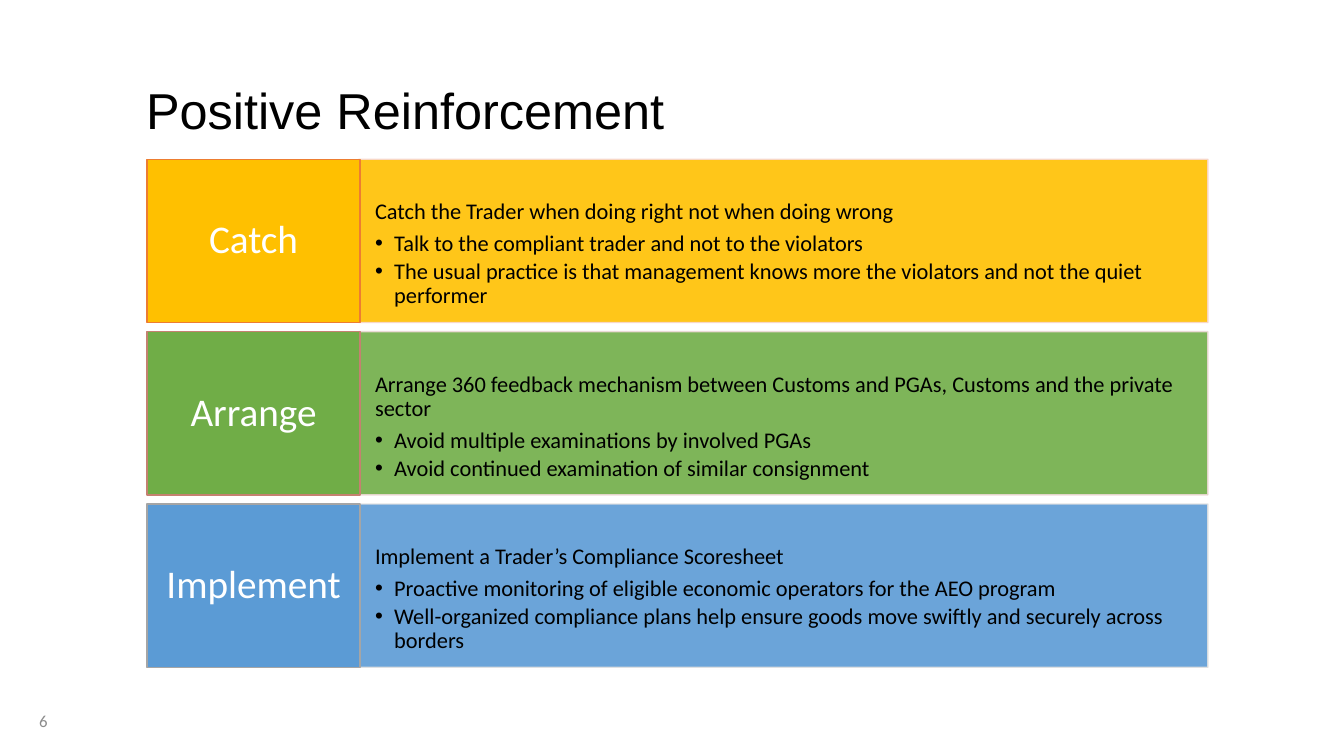
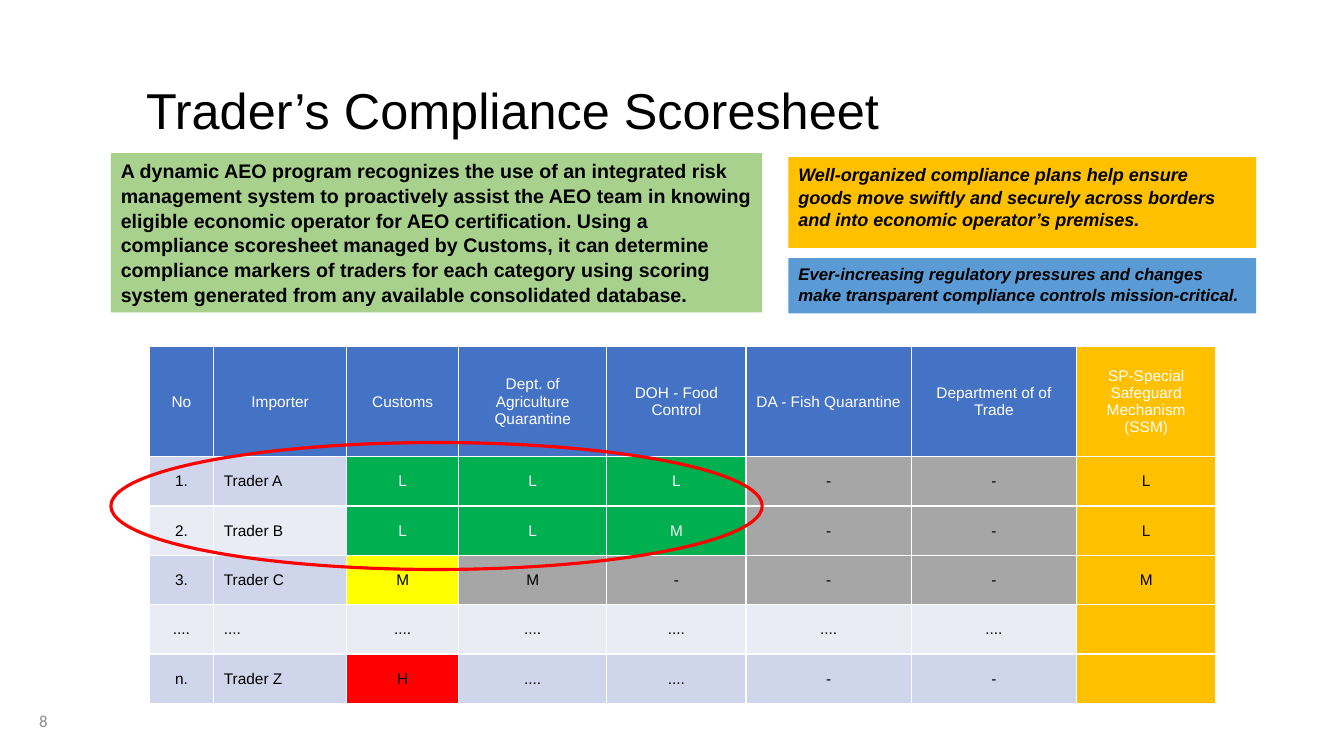
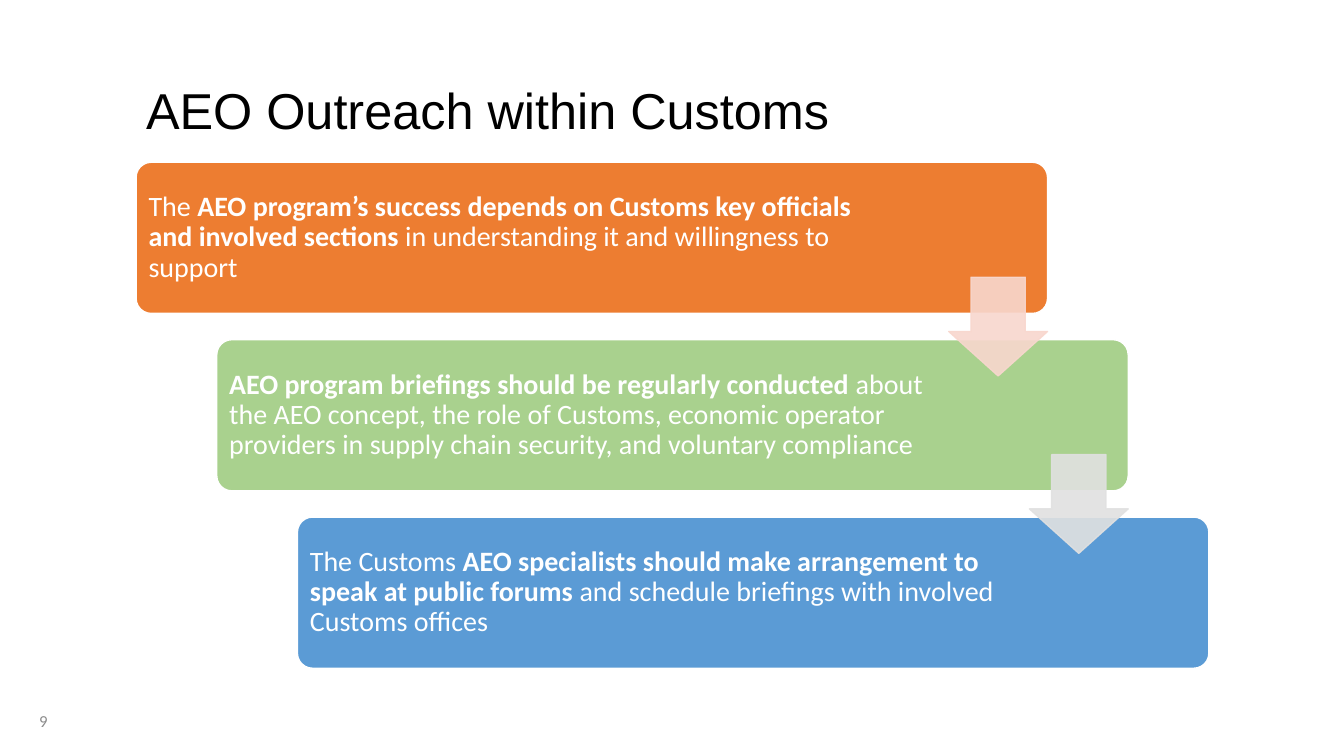
from dataclasses import dataclass
from typing import NamedTuple

from lxml.etree import SubElement
from pptx import Presentation
from pptx.dml.color import RGBColor
from pptx.enum.shapes import MSO_SHAPE as Shape
from pptx.enum.text import MSO_ANCHOR as Anchor, PP_ALIGN as Align
from pptx.oxml.ns import qn
from pptx.util import Emu, Pt

EMU_PER_PX = 9144  # 100 px to the inch
BLANK_LAYOUT = 6

BLACK, WHITE, GREY = "000000", "FFFFFF", "8C8C8C"
GOLD, GREEN, BLUE, ORANGE = "FFC000", "70AD47", "5B9BD5", "ED7D31"
PALE_GREEN, PALE_ROSE, PALE_GREY = "A9D18E", "F8D7CE", "E1E1E1"
RED, YELLOW, LOW_RISK, UNUSED = "FF0000", "FFFF00", "00B050", "A6A6A6"
HEADER, BAND_DARK, BAND_LIGHT = "4472C4", "CFD5EA", "E9EBF5"


class Box(NamedTuple):
    left: int
    top: int
    width: int
    height: int


class Insets(NamedTuple):
    left: int = 10
    top: int = 5
    right: int = 10
    bottom: int = 5


@dataclass
class Style:
    size: float
    color: str = BLACK
    font: str = "Calibri"
    bold: bool = False
    italic: bool = False
    align: Align = Align.LEFT
    line_spacing: float = 1.0
    space_after: float = 0
    bullet: bool = False


class Run(NamedTuple):
    text: str
    bold: bool = False


class Paragraph(NamedTuple):
    runs: list[Run]
    style: Style


class Practice(NamedTuple):
    verb: str
    fill: str
    edge: str
    panel_edge: str
    statement: str
    details: list[str]


class Callout(NamedTuple):
    box: Box
    fill: str
    text: str
    style: Style


class Step(NamedTuple):
    fill: str
    right_inset: int
    runs: list[Run]


class ScoreRow(NamedTuple):
    texts: list[str]
    fills: list[str]


TITLE = Style(36, font="Arial", line_spacing=0.9)
PAGE_NUMBER = Style(12, GREY, align=Align.RIGHT)
VERB = Style(28, WHITE, align=Align.CENTER, line_spacing=0.9)
STATEMENT = Style(16, line_spacing=0.9, space_after=5.6)
DETAIL = Style(16, line_spacing=0.9, space_after=2.4, bullet=True)
STEP_TEXT = Style(20, WHITE, line_spacing=0.9)

PRACTICES = [
    Practice("Catch", GOLD, ORANGE, PALE_ROSE,
             "Catch the Trader when doing right not when doing wrong",
             ["Talk to the compliant trader and not to the violators",
              "The usual practice is that management knows more the violators "
              "and not the quiet performer"]),
    Practice("Arrange", GREEN, "C48170", "EDD9D7",
             "Arrange 360 feedback mechanism between Customs and PGAs, "
             "Customs and the private sector",
             ["Avoid multiple examinations by involved PGAs",
              "Avoid continued examination of similar consignment"]),
    Practice("Implement", BLUE, "A5A5A5", PALE_GREY,
             "Implement a Trader’s Compliance Scoresheet",
             ["Proactive monitoring of eligible economic operators for the AEO program",
              "Well-organized compliance plans help ensure goods move swiftly "
              "and securely across borders"]),
]


def callout_style(size: float, italic: bool = True) -> Style:
    return Style(size, font="Arial", bold=True, italic=italic, line_spacing=1.05)


CALLOUTS = [
    Callout(Box(110, 152, 646, 158), PALE_GREEN,
            "A dynamic AEO program recognizes the use of an integrated risk management "
            "system to proactively assist the AEO team in knowing eligible economic "
            "operator for AEO certification. Using a compliance scoresheet managed by "
            "Customs, it can determine compliance markers of traders for each category "
            "using scoring system generated from any available consolidated database.",
            callout_style(14, italic=False)),
    Callout(Box(782, 156, 464, 90), GOLD,
            "Well-organized compliance plans help ensure goods move swiftly and securely "
            "across borders and into economic operator’s premises.",
            callout_style(12.9)),
    Callout(Box(782, 256, 464, 55), BLUE,
            "Ever-increasing regulatory pressures and changes make transparent "
            "compliance controls mission-critical.",
            callout_style(12)),
]

COLUMN_WIDTHS = [64, 132, 111, 147, 138, 164, 164, 138]
HEADER_HEIGHT, ROW_HEIGHT = 109, 49
IMPORTER_COLUMN = 1
SCORES = [
    ScoreRow(["No", "Importer", "Customs", "Dept. of Agriculture\nQuarantine",
              "DOH - Food Control", "DA - Fish Quarantine", "Department of of Trade",
              "SP-Special Safeguard Mechanism (SSM)"],
             [HEADER] * 7 + [GOLD]),
    ScoreRow(["1.", "Trader A", "L", "L", "L", "-", "-", "L"],
             [BAND_DARK] * 2 + [LOW_RISK] * 3 + [UNUSED] * 2 + [GOLD]),
    ScoreRow(["2.", "Trader B", "L", "L", "M", "-", "-", "L"],
             [BAND_LIGHT] * 2 + [LOW_RISK] * 3 + [UNUSED] * 2 + [GOLD]),
    ScoreRow(["3.", "Trader C", "M", "M", "-", "-", "-", "M"],
             [BAND_DARK] * 2 + [YELLOW] + [UNUSED] * 4 + [GOLD]),
    ScoreRow(["...."] * 7 + [""], [BAND_LIGHT] * 7 + [GOLD]),
    ScoreRow(["n.", "Trader Z", "H", "....", "....", "-", "-", ""],
             [BAND_DARK] * 2 + [RED] + [BAND_DARK] * 4 + [GOLD]),
]

STEPS = [
    Step(ORANGE, 162,
         [Run("The "),
          Run("AEO program’s success depends on Customs key officials "
              "and involved sections ", True),
          Run("in understanding it and willingness to support")]),
    Step(PALE_GREEN, 186,
         [Run("AEO program briefings should be regularly conducted ", True),
          Run("about the AEO concept, the role of Customs, economic operator providers "
              "in supply chain security, and voluntary compliance")]),
    Step(BLUE, 186,
         [Run("The Customs"),
          Run(" AEO specialists should make arrangement to speak at public forums", True),
          Run(" and schedule briefings with involved Customs offices")]),
]
ARROW_COLORS = [PALE_ROSE, PALE_GREY]


def px(length: int) -> Emu:
    return Emu(length * EMU_PER_PX)


def rgb(color: str) -> RGBColor:
    return RGBColor.from_string(color)


def paint(fill, color: str, opacity: int = 100) -> None:
    fill.solid()
    fill.fore_color.rgb = rgb(color)
    if opacity < 100:
        hue = fill._xPr.find(".//" + qn("a:srgbClr"))
        SubElement(hue, qn("a:alpha"), val=str(opacity * 1000))


def plain(text: str, style: Style) -> Paragraph:
    return Paragraph([Run(text, style.bold)], style)


def write(frame, paragraphs: list[Paragraph]) -> None:
    for index, (runs, style) in enumerate(paragraphs):
        line = frame.add_paragraph() if index else frame.paragraphs[0]
        if style.bullet:
            props = line._p.get_or_add_pPr()
            props.set("marL", str(px(19)))
            props.set("indent", str(px(-19)))
            SubElement(props, qn("a:buFont"), typeface="Arial")
            SubElement(props, qn("a:buChar"), char="•")
        line.alignment = style.align
        line.line_spacing = style.line_spacing
        line.space_after = Pt(style.space_after)
        for text, bold in runs:
            run = line.add_run()
            run.text = text
            font = run.font
            font.name, font.size = style.font, Pt(style.size)
            font.bold, font.italic = bold, style.italic
            font.color.rgb = rgb(style.color)


def fill_frame(frame, paragraphs: list[Paragraph], anchor: Anchor, insets: Insets) -> None:
    frame.word_wrap = True
    frame.vertical_anchor = anchor
    frame.margin_left, frame.margin_top = px(insets.left), px(insets.top)
    frame.margin_right, frame.margin_bottom = px(insets.right), px(insets.bottom)
    write(frame, paragraphs)


def add_text(slide, box: Box, text: str, style: Style) -> None:
    label = slide.shapes.add_textbox(*map(px, box))
    fill_frame(label.text_frame, [plain(text, style)], Anchor.MIDDLE, Insets())


def add_block(slide, kind: Shape, box: Box, fill: str | None = None,
              edge: str | None = None, edge_width: float = 1, opacity: int = 100,
              paragraphs: list[Paragraph] | None = None, anchor: Anchor = Anchor.MIDDLE,
              insets: Insets = Insets(), adjustments: tuple[float, ...] = ()) -> None:
    block = slide.shapes.add_shape(kind, *map(px, box))
    block.shadow.inherit = False
    for index, value in enumerate(adjustments):
        block.adjustments[index] = value
    if fill:
        paint(block.fill, fill, opacity)
    else:
        block.fill.background()
    if edge:
        paint(block.line.fill, edge, opacity)
        block.line.width = Pt(edge_width)
    else:
        block.line.fill.background()
    if paragraphs:
        fill_frame(block.text_frame, paragraphs, anchor, insets)


def add_slide(deck, title: str, number: int):
    slide = deck.slides.add_slide(deck.slide_layouts[BLANK_LAYOUT])
    add_text(slide, Box(135, 40, 958, 145), title, TITLE)
    add_text(slide, Box(0, 695, 57, 40), str(number), PAGE_NUMBER)
    return slide


def add_borders(cell, color: str, width: float) -> None:
    props = cell._tc.get_or_add_tcPr()
    for side in ("lnL", "lnR", "lnT", "lnB"):
        border = SubElement(props, qn(f"a:{side}"), w=str(Pt(width)))
        solid = SubElement(border, qn("a:solidFill"))
        SubElement(solid, qn("a:srgbClr"), val=color)


def add_scoresheet(slide, left: int, top: int) -> None:
    heights = [HEADER_HEIGHT] + [ROW_HEIGHT] * (len(SCORES) - 1)
    box = Box(left, top, sum(COLUMN_WIDTHS), sum(heights))
    table = slide.shapes.add_table(len(SCORES), len(COLUMN_WIDTHS), *map(px, box)).table
    table.first_row = table.horz_banding = False
    for column, width in zip(table.columns, COLUMN_WIDTHS):
        column.width = px(width)
    for r, (score, height) in enumerate(zip(SCORES, heights)):
        table.rows[r].height = px(height)
        for c, (text, fill) in enumerate(zip(score.texts, score.fills)):
            cell = table.cell(r, c)
            add_borders(cell, WHITE, 1)
            paint(cell.fill, fill)
            cell.vertical_anchor = Anchor.MIDDLE
            color = WHITE if r == 0 else "F2F2F2" if fill == LOW_RISK else BLACK
            left_aligned = r > 0 and c == IMPORTER_COLUMN
            style = Style(11, color, "Arial",
                          align=Align.LEFT if left_aligned else Align.CENTER)
            if text:
                write(cell.text_frame, [plain(part, style) for part in text.split("\n")])


def build_reinforcement(deck) -> None:
    slide = add_slide(deck, "Positive Reinforcement", 6)
    for index, practice in enumerate(PRACTICES):
        top = 158 + 171 * index
        body = [plain(practice.statement, STATEMENT)]
        body += [plain(detail, DETAIL) for detail in practice.details]
        add_block(slide, Shape.RECTANGLE, Box(356, top, 842, 162), practice.fill,
                  practice.panel_edge, opacity=90, paragraphs=body,
                  anchor=Anchor.TOP, insets=Insets(16, 41, 16, 0))
        add_block(slide, Shape.RECTANGLE, Box(146, top, 211, 162), practice.fill,
                  practice.edge, paragraphs=[plain(practice.verb, VERB)],
                  insets=Insets(11, 16, 11, 16))


def build_scoresheet(deck) -> None:
    slide = add_slide(deck, "Trader’s Compliance Scoresheet", 8)
    for callout in CALLOUTS:
        add_block(slide, Shape.RECTANGLE, callout.box, callout.fill,
                  paragraphs=[plain(callout.text, callout.style)], anchor=Anchor.TOP)
    add_scoresheet(slide, 148, 344)
    add_block(slide, Shape.OVAL, Box(110, 439, 646, 126), edge=RED, edge_width=2.25)


def build_outreach(deck) -> None:
    slide = add_slide(deck, "AEO Outreach within Customs", 9)
    shift, drop = 80, 176
    for index, step in enumerate(STEPS):
        add_block(slide, Shape.ROUNDED_RECTANGLE,
                  Box(135 + shift * index, 161 + drop * index, 904, 150),
                  step.fill, WHITE, paragraphs=[Paragraph(step.runs, STEP_TEXT)],
                  insets=Insets(8, 8, step.right_inset, 8), adjustments=(0.1,))
    for index, color in enumerate(ARROW_COLORS):
        add_block(slide, Shape.DOWN_ARROW,
                  Box(941 + shift * index, 275 + drop * index, 98, 98),
                  color, color, opacity=90, adjustments=(0.55, 0.45))


def main() -> None:
    deck = Presentation()
    deck.slide_width, deck.slide_height = px(1333), px(750)
    build_reinforcement(deck)
    build_scoresheet(deck)
    build_outreach(deck)
    deck.save("out.pptx")


if __name__ == "__main__":
    main()
